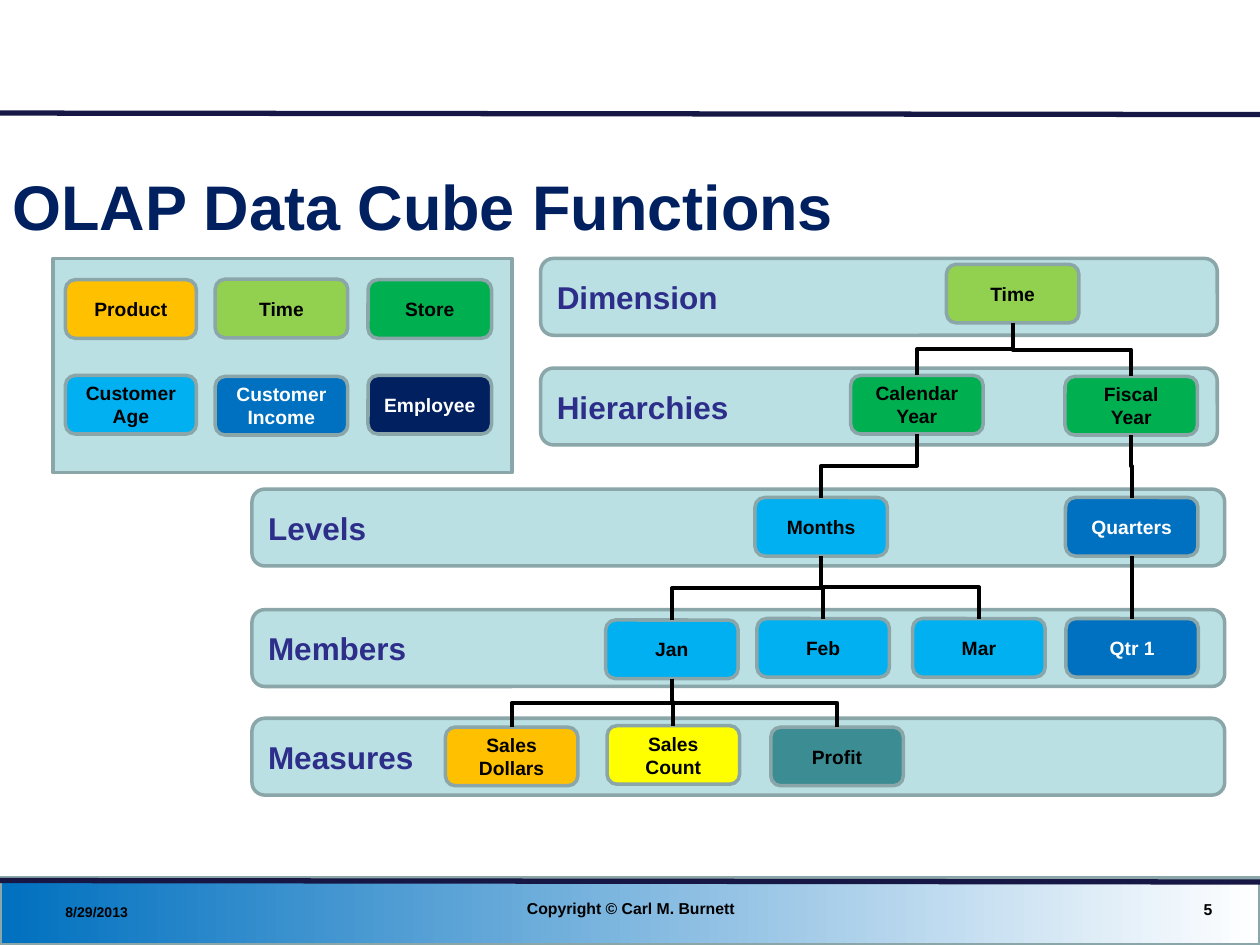
from typing import NamedTuple

from lxml.etree import SubElement
from pptx import Presentation
from pptx.dml.color import RGBColor
from pptx.enum.shapes import MSO_CONNECTOR as Link, MSO_SHAPE as Preset
from pptx.enum.text import MSO_ANCHOR as Anchor, PP_ALIGN as Align
from pptx.oxml.ns import qn
from pptx.util import Cm, Pt

BLACK, WHITE, NAVY = "000000", "FFFFFF", "002060"
AMBER, LIME, GREEN = "FFC000", "92D050", "00B050"
SKY, BLUE, YELLOW, TEAL = "00B0F0", "0070C0", "FFFF00", "3C8C93"
PALE, EDGE, INDIGO, RULE = "BBE0E3", "8AA6A8", "2D2D8A", "171745"
NODE_WIDTH, NODE_HEIGHT, BAND_HEIGHT = 2.67, 1.18, 1.55


class Node(NamedTuple):
    text: str
    left: float
    top: float
    fill: str
    color: str = BLACK
    width: float = NODE_WIDTH


class Band(NamedTuple):
    text: str
    left: float
    top: float
    width: float


class Caption(NamedTuple):
    text: str
    left: float
    top: float
    width: float
    height: float
    size: float
    align: Align = Align.LEFT
    color: str = BLACK


CAPTIONS = [
    Caption("OLAP Data Cube Functions", 0, 2.9, 24.33, 2.46, 36, color=NAVY),
    Caption("8/29/2013", 1.07, 18.03, 5.92, 0.69, 8),
    Caption("5", 18.77, 17.96, 5.92, 0.74, 9, Align.RIGHT),
    Caption("Copyright © Carl M. Burnett", 8.69, 17.93, 8.05, 0.74, 9, Align.CENTER),
]
PALETTE = [
    Node("Product", 1.32, 5.64, AMBER, width=2.64),
    Node("Time", 4.34, 5.63, LIME),
    Node("Store", 7.42, 5.64, GREEN, width=2.49),
    Node("Customer\nAge", 1.32, 7.57, SKY, width=2.64),
    Node("Customer\vIncome", 4.34, 7.59, BLUE, WHITE),
    Node("Employee", 7.42, 7.57, NAVY, WHITE, 2.49),
]
BANDS = [
    Band("Dimension", 10.9, 5.21, 13.64),
    Band("Hierarchies", 10.9, 7.42, 13.64),
    Band("Levels", 5.08, 9.86, 19.61),
    Band("Members", 5.08, 12.29, 19.61),
    Band("Measures", 5.08, 14.48, 19.61),
]
TREE = {
    "time": Node("Time", 19.08, 5.33, LIME),
    "calendar": Node("Calendar\vYear", 17.15, 7.57, GREEN),
    "fiscal": Node("Fiscal\vYear", 21.47, 7.59, GREEN),
    "months": Node("Months", 15.22, 10.03, SKY),
    "quarters": Node("Quarters", 21.48, 10.03, BLUE, WHITE),
    "jan": Node("Jan", 12.21, 12.5, SKY),
    "feb": Node("Feb", 15.26, 12.47, SKY),
    "mar": Node("Mar", 18.4, 12.47, SKY),
    "quarter 1": Node("Qtr 1", 21.49, 12.47, BLUE, WHITE),
    "dollars": Node("Sales\vDollars", 8.98, 14.66, AMBER),
    "count": Node("Sales\vCount", 12.24, 14.63, YELLOW),
    "profit": Node("Profit", 15.54, 14.66, TEAL),
}
CHILDREN = {
    "time": ["calendar", "fiscal"],
    "calendar": ["months"],
    "fiscal": ["quarters"],
    "months": ["jan", "feb", "mar"],
    "quarters": ["quarter 1"],
    "jan": ["dollars", "count", "profit"],
}


def rgb(value: str) -> RGBColor:
    return RGBColor.from_string(value)


def write(box, text: str, size: float, color: str, align: Align) -> None:
    frame = box.text_frame
    frame.word_wrap = True
    frame.vertical_anchor = Anchor.MIDDLE
    frame.text = text
    for para in frame.paragraphs:
        para.alignment = align
        para.font.name = "Arial"
        para.font.size = Pt(size)
        para.font.bold = True
        para.font.color.rgb = rgb(color)


def add_box(page, preset: Preset, left: float, top: float,
            width: float, height: float, fill: str = PALE):
    box = page.shapes.add_shape(preset, Cm(left), Cm(top), Cm(width), Cm(height))
    box.shadow.inherit = False
    box.fill.solid()
    box.fill.fore_color.rgb = rgb(fill)
    box.line.color.rgb = rgb(EDGE)
    box.line.width = Pt(2)
    return box


def add_line(page, kind: Link, x1: float, y1: float, x2: float, y2: float,
             color: str, weight: float):
    line = page.shapes.add_connector(kind, Cm(x1), Cm(y1), Cm(x2), Cm(y2))
    line.line.color.rgb = rgb(color)
    line.line.width = Pt(weight)
    SubElement(line._element.spPr, qn("a:effectLst"))
    return line


def add_node(page, node: Node) -> None:
    box = add_box(page, Preset.ROUNDED_RECTANGLE, node.left, node.top,
                  node.width, NODE_HEIGHT, node.fill)
    write(box, node.text, 11, node.color, Align.CENTER)


def add_band(page, band: Band) -> None:
    box = add_box(page, Preset.ROUNDED_RECTANGLE, band.left, band.top,
                  band.width, BAND_HEIGHT)
    write(box, band.text, 18, INDIGO, Align.LEFT)


def add_caption(page, caption: Caption) -> None:
    box = page.shapes.add_textbox(Cm(caption.left), Cm(caption.top),
                                  Cm(caption.width), Cm(caption.height))
    write(box, caption.text, caption.size, caption.color, caption.align)


def join(page, parent: Node, child: Node) -> None:
    """Run an elbow down from parent to child; the preset is turned to start vertically."""
    x1, y1 = parent.left + parent.width / 2, parent.top + NODE_HEIGHT
    x2, y2 = child.left + child.width / 2, child.top
    middle_x, middle_y = (x1 + x2) / 2, (y1 + y2) / 2
    half_drop, half_shift = (y2 - y1) / 2, abs(x2 - x1) / 2
    elbow = add_line(page, Link.ELBOW, middle_x - half_drop, middle_y - half_shift,
                     middle_x + half_drop, middle_y + half_shift, BLACK, 2.25)
    turn = elbow._element.spPr.find(qn("a:xfrm"))
    if x2 < x1:
        turn.set("rot", str(90 * 60000))
    else:
        turn.set("rot", str(270 * 60000))
        turn.set("flipH", "1")


def add_footer_bar(page) -> None:
    bar = add_box(page, Preset.RECTANGLE, 0, 17.7, 25.4, 1.35)
    bar.fill.gradient()
    bar.fill.gradient_angle = 0
    for stop, color in zip(bar.fill.gradient_stops, (BLUE, WHITE)):
        stop.color.rgb = rgb(color)


def main() -> None:
    deck = Presentation()
    deck.slide_width, deck.slide_height = Cm(25.4), Cm(19.05)
    page = deck.slides.add_slide(deck.slide_layouts[6])

    add_footer_bar(page)
    for top in (17.75, 2.28):
        add_line(page, Link.STRAIGHT, 0, top, 25.4, top + 0.03, RULE, 3)
    for caption in CAPTIONS:
        add_caption(page, caption)

    add_box(page, Preset.RECTANGLE, 1.07, 5.21, 9.25, 4.32)
    for node in PALETTE:
        add_node(page, node)
    for band in BANDS:
        add_band(page, band)
    for node in TREE.values():
        add_node(page, node)
    for parent, children in CHILDREN.items():
        for child in children:
            join(page, TREE[parent], TREE[child])

    deck.save("out.pptx")


if __name__ == "__main__":
    main()
